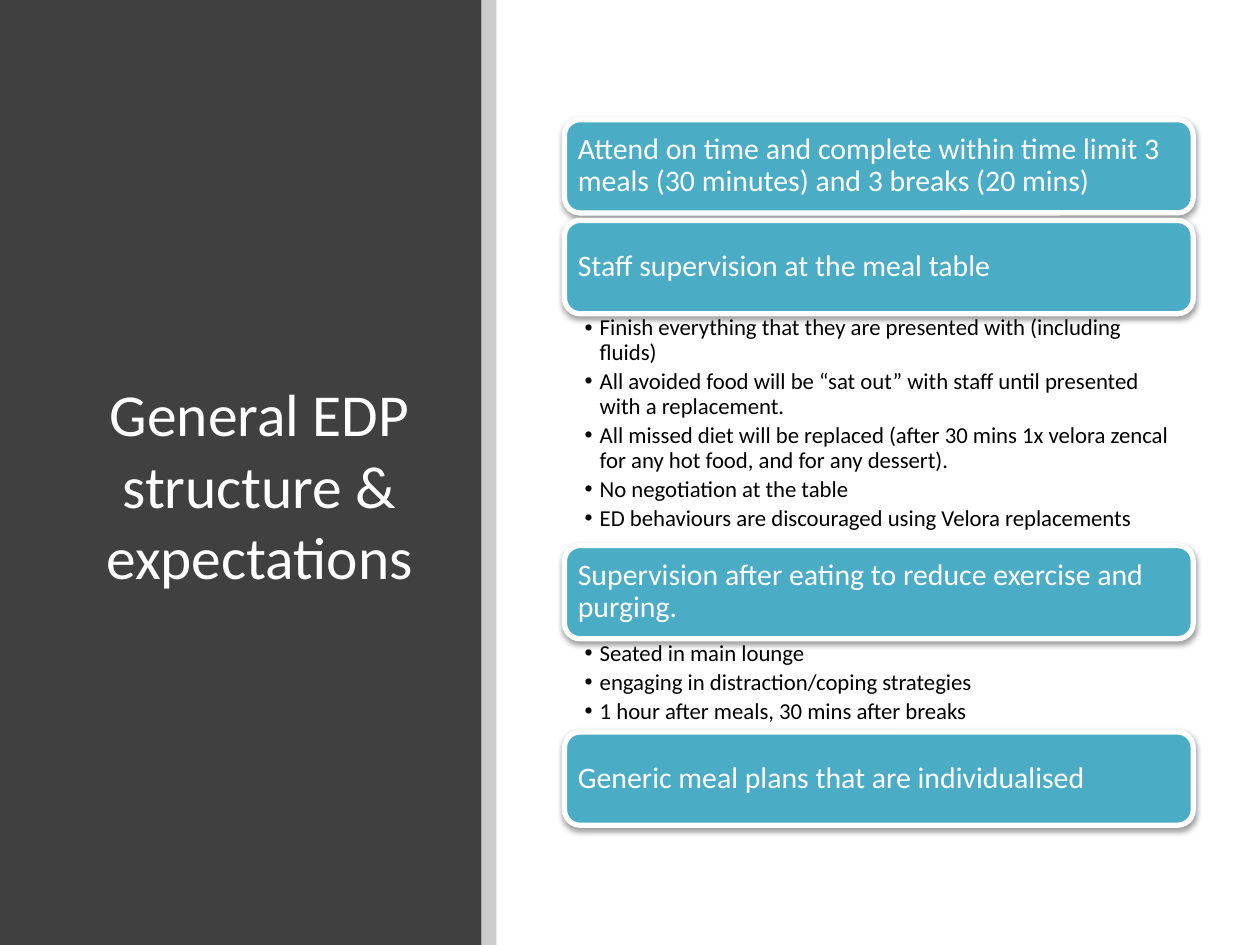
from lxml import etree
from pptx import Presentation
from pptx.dml.color import RGBColor
from pptx.enum.shapes import MSO_SHAPE as Preset
from pptx.enum.text import MSO_ANCHOR as Anchor, MSO_AUTO_SIZE as AutoSize, PP_ALIGN as Align
from pptx.oxml import parse_xml
from pptx.oxml.ns import nsdecls, qn
from pptx.util import Inches, Pt

WHITE = RGBColor(0xFF, 0xFF, 0xFF)
BLACK = RGBColor(0x00, 0x00, 0x00)
CHARCOAL = RGBColor(0x40, 0x40, 0x40)
TEAL = RGBColor(0x4B, 0xAC, 0xC6)

# Grid of 100 columns by 75 rows
COLUMNS, ROWS = 100, 75
STACK_LEFT, STACK_TOP, STACK_WIDTH = 44.8, 9.5, 49.9
BAR_HEIGHT, BAR_GAP = 7.4, 0.6

# Heading, list items, rows down to the next heading
SECTIONS = [
    ("Attend on time and complete within time limit 3 meals (30 minutes) "
     "and 3 breaks (20 mins)", [], BAR_GAP),
    ("Staff supervision at the meal table", [
        "Finish everything that they are presented with (including fluids)",
        "All avoided food will be “sat out” with staff until presented with a replacement.",
        "All missed diet will be replaced (after 30 mins 1x velora zencal for any hot food, "
        "and for any dessert).",
        "No negotiation at the table",
        "ED behaviours are discouraged using Velora replacements",
    ], 18.4),
    ("Supervision after eating to reduce exercise and purging.", [
        "Seated in main lounge",
        "engaging in distraction/coping strategies",
        "1 hour after meals, 30 mins after breaks",
    ], 7.4),
    ("Generic meal plans that are individualised", [], 0),
]


def apply(target, values):
    for name, value in values.items():
        setattr(target, name, value)


class SlideBuilder:
    font_name = "Calibri"

    def __init__(self, deck, layout):
        self.page = deck.slides.add_slide(deck.slide_layouts[layout])
        self.column = deck.slide_width / COLUMNS
        self.row = deck.slide_height / ROWS

    def area(self, left, top, width, height):
        return (round(left * self.column), round(top * self.row),
                round(width * self.column), round(height * self.row))

    def place(self, box, *cells):
        apply(box, dict(zip(("left", "top", "width", "height"), self.area(*cells))))

    def fill_text(self, box, lines, size, color, insets, anchor, **para_format):
        """Fill a box with one paragraph per line in the deck's font."""
        frame = box.text_frame
        sides = ("margin_left", "margin_top", "margin_right", "margin_bottom")
        apply(frame, dict(zip(sides, map(Inches, insets))))
        apply(frame, {"word_wrap": True, "auto_size": AutoSize.NONE,
                      "vertical_anchor": anchor})
        frame.text = "\n".join(lines)
        for para in frame.paragraphs:
            apply(para, {"space_before": Pt(0), **para_format})
            for span in para.runs:
                apply(span.font, {"name": self.font_name, "size": Pt(size)})
                span.font.color.rgb = color

    def shape(self, preset, cells, fill):
        box = self.page.shapes.add_shape(preset, *self.area(*cells))
        box.shadow.inherit = False
        box.fill.solid()
        box.fill.fore_color.rgb = fill
        box.line.fill.background()
        return box

    def panel(self, cells, fill, opacity=100):
        """Background rectangle, kept behind the placeholders."""
        box = self.shape(Preset.RECTANGLE, cells, fill)
        if opacity < 100:
            color = box._element.spPr.find(qn("a:solidFill"))[0]
            etree.SubElement(color, qn("a:alpha"), val=str(opacity * 1000))
        self.page.shapes._spTree.insert(2, box._element)

    def title(self, text, cells):
        box = self.page.shapes.title
        self.place(box, *cells)
        self.fill_text(box, [text], 34, WHITE, (0.1, 0.05, 0.1, 0.05), Anchor.MIDDLE,
                       alignment=Align.CENTER)

    def bar(self, text, cells):
        """Rounded heading bar with a white outline and a soft shadow."""
        box = self.shape(Preset.ROUNDED_RECTANGLE, cells, TEAL)
        box.line.color.rgb = WHITE
        box.line.width = Pt(3)
        effects = box._element.spPr.find(qn("a:effectLst"))
        effects.append(parse_xml(
            f'<a:outerShdw {nsdecls("a")} blurRad="{Pt(3.1)}" dist="{Pt(1.6)}" '
            'dir="5400000" rotWithShape="0"><a:srgbClr val="000000">'
            '<a:alpha val="38000"/></a:srgbClr></a:outerShdw>'))
        self.fill_text(box, [text], 17, WHITE, (0.07,) * 4, Anchor.MIDDLE,
                       alignment=Align.LEFT, line_spacing=0.9)

    def bullets(self, box, items, cells):
        self.place(box, *cells)
        self.fill_text(box, items, 13, BLACK, (0.16, 0.02, 0.13, 0.02), Anchor.TOP,
                       line_spacing=0.9, space_after=Pt(2.6))
        for para in box.text_frame.paragraphs:
            properties = para._p.get_or_add_pPr()
            properties.set("marL", str(Inches(0.12)))
            properties.set("indent", str(-Inches(0.12)))


def main():
    deck = Presentation()
    deck.slide_width, deck.slide_height = Inches(10), Inches(7.5)
    builder = SlideBuilder(deck, layout=3)

    # Title side
    builder.panel((0, 0, 38.2, ROWS), CHARCOAL)
    builder.panel((38.2, 0, 1.2, ROWS), BLACK, opacity=20)
    builder.title("General EDP structure & expectations", (6.9, 8.9, 27.4, 59.1))

    # Stack of heading bars and lists
    list_boxes = iter([box for box in builder.page.placeholders
                       if box.placeholder_format.idx in (1, 2)])
    top = STACK_TOP
    for heading, items, list_height in SECTIONS:
        builder.bar(heading, (STACK_LEFT, top, STACK_WIDTH, BAR_HEIGHT))
        top += BAR_HEIGHT
        if items:
            builder.bullets(next(list_boxes), items,
                            (STACK_LEFT, top, STACK_WIDTH, list_height))
        top += list_height

    deck.save("out.pptx")


if __name__ == "__main__":
    main()
